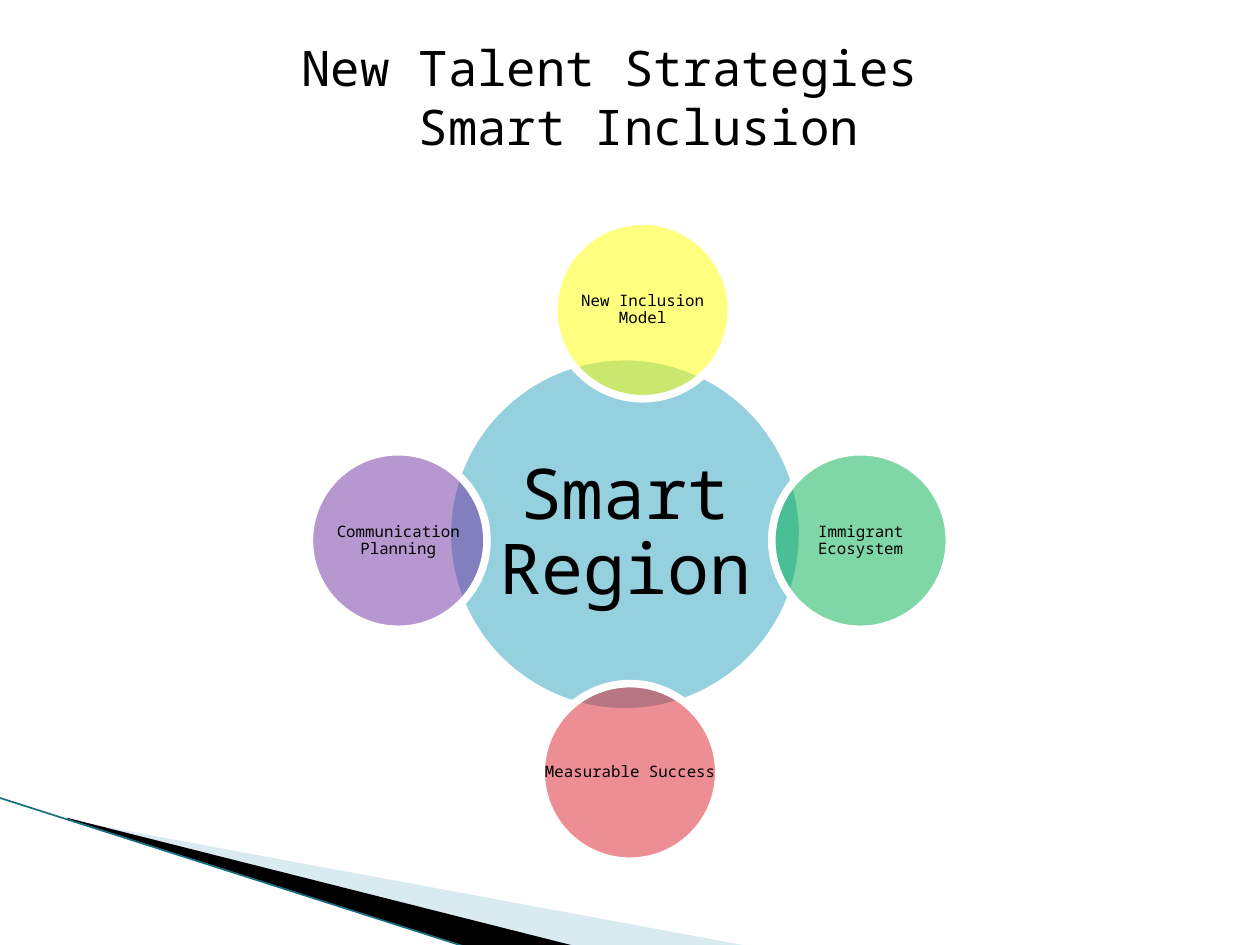
from lxml import etree
from pptx import Presentation
from pptx import util as u
from pptx.dml.color import RGBColor
from pptx.enum import shapes, text
from pptx.oxml.ns import qn

FONT = "Noto Sans Mono"
TITLE = ["New Talent Strategies ", " Smart Inclusion"]
HUB = ("Smart Region", 4.96, 4.24, "2DA2BF")
SATELLITES = [
    ("New Inclusion Model", 5.1, 2.46, "FFFF00"),
    ("Immigrant Ecosystem", 6.83, 4.29, "00B050"),
    ("Measurable Success", 5, 6.13, "DA1F28"),
    ("Communication Planning", 3.16, 4.29, "7030A0"),
]
WEDGES = [
    ([(0.55, 6.51), (5.95, 7.51), (4.56, 7.51), (0.55, 6.5)], "A0CBDC", 40),
    ([(0.53, 6.49), (4.57, 7.51), (3.72, 7.52), (0.54, 6.5)], "000000", 100),
]
EDGE = [(-0.01, 6.33), (3.71, 7.52)]


def color(value):
    return RGBColor.from_string(value)


def inches(*values):
    return [u.Inches(value) for value in values]


def paint(shape, fill, opacity):
    shape.shadow.inherit = False
    shape.fill.solid()
    shape.fill.fore_color.rgb = color(fill)
    if opacity < 100:
        tint = shape._element.spPr.find(qn("a:solidFill")).find(qn("a:srgbClr"))
        etree.SubElement(tint, qn("a:alpha")).set("val", str(opacity * 1000))


def add_text(page, lines, area, size, inset, spacing=None, anchor="TOP"):
    frame = page.shapes.add_textbox(*inches(*area)).text_frame
    margins = dict(zip(("margin_left", "margin_top", "margin_right", "margin_bottom"), inches(*inset)))
    layout = {"word_wrap": True, "vertical_anchor": text.MSO_ANCHOR[anchor], **margins}
    for name, value in layout.items():
        setattr(frame, name, value)
    for index, line in enumerate(lines):
        para = frame.add_paragraph() if index else frame.paragraphs[0]
        para.alignment = text.PP_ALIGN.CENTER
        para.line_spacing = spacing
        span = para.add_run()
        span.text = line
        for name, value in {"name": FONT, "size": u.Pt(size)}.items():
            setattr(span.font, name, value)
        span.font.color.rgb = color("000000")


def add_circle(page, label, x, y, fill, diameter, size, inset):
    area = (x - diameter / 2, y - diameter / 2, diameter, diameter)
    circle = page.shapes.add_shape(shapes.MSO_SHAPE.OVAL, *inches(*area))
    paint(circle, fill, 50)
    circle.line.color.rgb = color("FFFFFF")
    circle.line.width = u.Pt(4.33)
    add_text(page, [label], area, size, [inset] * 4, 0.9, "MIDDLE")


def add_corner(page):
    for points, fill, opacity in WEDGES:
        start, *rest = [inches(*point) for point in points]
        builder = page.shapes.build_freeform(*start)
        builder.add_line_segments(rest, close=True)
        wedge = builder.convert_to_shape()
        paint(wedge, fill, opacity)
        wedge.line.fill.background()
    edge = page.shapes.add_connector(shapes.MSO_CONNECTOR.STRAIGHT, *inches(*EDGE[0], *EDGE[1]))
    edge.line.color.rgb = color("176E83")
    edge.line.width = u.Pt(0.95)
    etree.SubElement(edge._element.spPr, qn("a:effectLst"))


def main():
    deck = Presentation()
    deck.slide_width, deck.slide_height = inches(10, 7.5)
    page = deck.slides.add_slide(deck.slide_layouts[6])
    add_corner(page)
    add_text(page, TITLE, (0.33, 0.25, 9.25, 1.04), 28, (0.1, 0.05, 0.1, 0.05))
    add_circle(page, *HUB, diameter=2.82, size=40, inset=0.06)
    for satellite in SATELLITES:
        add_circle(page, *satellite, diameter=1.41, size=9, inset=0.01)
    deck.save("out.pptx")


if __name__ == "__main__":
    main()
